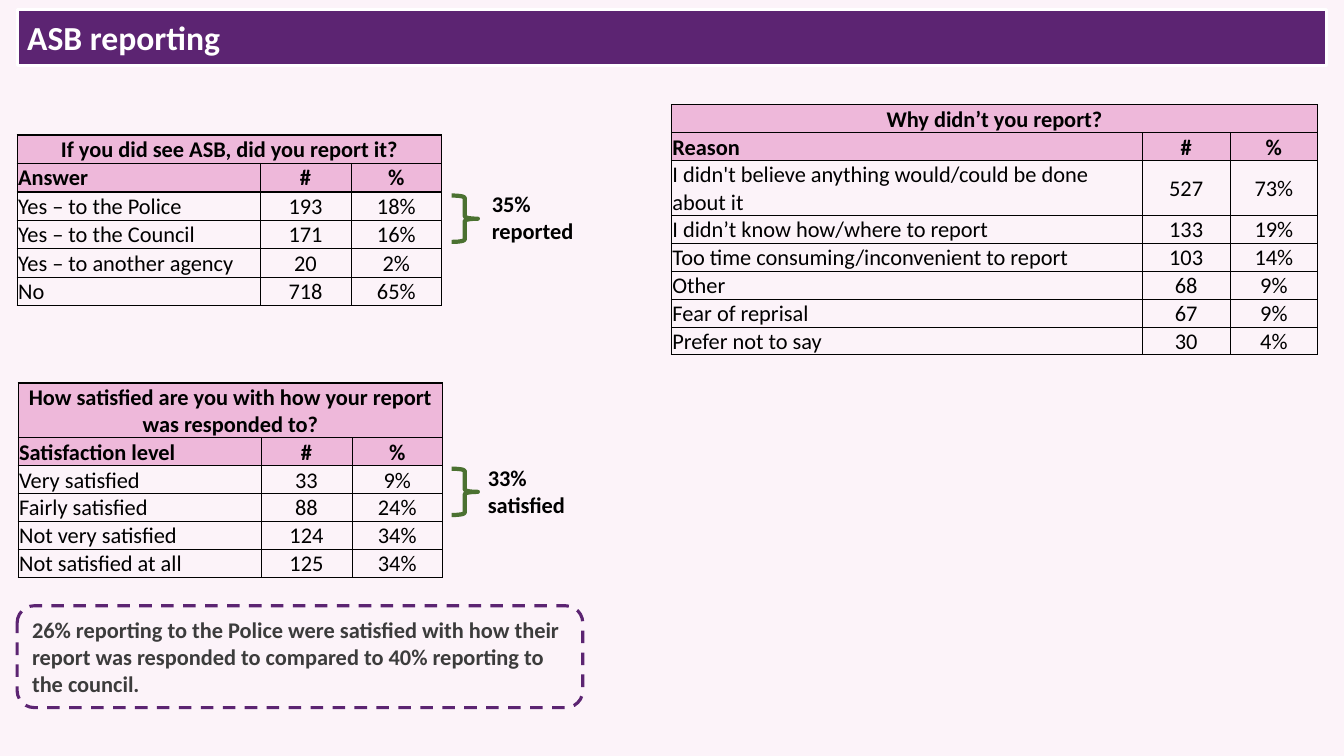
import dataclasses

import lxml.etree
import pptx
import pptx.dml.color
import pptx.enum.dml
import pptx.enum.shapes
import pptx.enum.text
import pptx.oxml
import pptx.oxml.ns
import pptx.util

Inches = pptx.util.Inches
Pt = pptx.util.Pt
Color = pptx.dml.color.RGBColor.from_string
Align = pptx.enum.text.PP_ALIGN
Anchor = pptx.enum.text.MSO_ANCHOR
Shape = pptx.enum.shapes.MSO_SHAPE


@dataclasses.dataclass(frozen=True)
class Theme:
    font: str = "Calibri"
    background: str = "FCF3F9"
    purple: str = "5C2472"
    pink: str = "EEB8DA"
    green: str = "4B7131"
    white: str = "FFFFFF"
    black: str = "000000"
    note: str = "3C3C3C"
    title_size: int = 24
    text_size: int = 16
    row_height: float = 0.27


THEME = Theme()

REPORTED = [
    ("Answer", "#", "%"),
    ("Yes – to the Police", "193", "18%"),
    ("Yes – to the Council", "171", "16%"),
    ("Yes – to another agency", "20", "2%"),
    ("No", "718", "65%"),
]
REASONS = [
    ("Reason", "#", "%"),
    ("I didn't believe anything would/could be done about it", "527", "73%"),
    ("I didn’t know how/where to report", "133", "19%"),
    ("Too time consuming/inconvenient to report", "103", "14%"),
    ("Other", "68", "9%"),
    ("Fear of reprisal", "67", "9%"),
    ("Prefer not to say", "30", "4%"),
]
SATISFACTION = [
    ("Satisfaction level", "#", "%"),
    ("Very satisfied", "33", "9%"),
    ("Fairly satisfied", "88", "24%"),
    ("Not very satisfied", "124", "34%"),
    ("Not satisfied at all", "125", "34%"),
]


def apply_format(target, values):
    for name, value in values.items():
        setattr(target, name, value)


def write_text(frame, text, color=THEME.black, size=THEME.text_size, bold=True, align=Align.LEFT):
    frame.word_wrap = True
    paragraph = frame.paragraphs[0]
    apply_format(paragraph, {"alignment": align, "line_spacing": 1.0})
    run = paragraph.add_run()
    run.text = text
    apply_format(run.font, {"name": THEME.font, "size": Pt(size), "bold": bold})
    run.font.color.rgb = Color(color)


def set_outline(shape, color, width, dash=None):
    shape.line.color.rgb = Color(color)
    apply_format(shape.line, {"width": Pt(width), "dash_style": dash})


def add_title(slide, text, box):
    title = slide.shapes.title
    apply_format(title, dict(zip(("left", "top", "width", "height"), map(Inches, box))))
    geometry = pptx.oxml.parse_xml(
        f'<a:prstGeom {pptx.oxml.ns.nsdecls("a")} prst="roundRect"><a:avLst/></a:prstGeom>'
    )
    title.element.spPr.insert(1, geometry)
    title.fill.solid()
    title.fill.fore_color.rgb = Color(THEME.purple)
    set_outline(title, THEME.white, 2.25)
    apply_format(title.text_frame, {
        "vertical_anchor": Anchor.MIDDLE,
        "auto_size": pptx.enum.text.MSO_AUTO_SIZE.NONE,
    })
    write_text(title.text_frame, text, THEME.white, THEME.title_size)


def add_outline_shape(shapes, kind, box, color, width, dash=None):
    shape = shapes.add_shape(kind, *map(Inches, box))
    shape.shadow.inherit = False
    shape.fill.background()
    set_outline(shape, color, width, dash)
    return shape


def add_brace_label(slide, text, brace_top, label_left, label_top):
    shapes = slide.shapes.add_group_shape().shapes
    add_outline_shape(shapes, Shape.RIGHT_BRACE, (4.48, brace_top, 0.26, 0.46), THEME.green, 3)
    label = shapes.add_textbox(*map(Inches, (label_left, label_top, 1.13, 0.64)))
    write_text(label.text_frame, text)


def set_borders(cell, widths):
    properties = cell._tc.get_or_add_tcPr()
    for index, (side, width) in enumerate(zip("LRTB", widths)):
        border = pptx.oxml.parse_xml(
            f'<a:ln{side} {pptx.oxml.ns.nsdecls("a")} w="{Pt(width)}">'
            f'<a:solidFill><a:srgbClr val="{THEME.black}"/></a:solidFill></a:ln{side}>'
        )
        properties.insert(index, border)


def format_cell(cell, text, heading, align):
    apply_format(cell, {
        "vertical_anchor": Anchor.MIDDLE,
        "margin_left": Inches(0.01),
        "margin_right": Inches(0.01),
        "margin_top": Inches(0.01),
        "margin_bottom": 0,
    })
    if heading:
        cell.fill.solid()
        cell.fill.fore_color.rgb = Color(THEME.pink)
    else:
        cell.fill.background()
    if text:
        write_text(cell.text_frame, text, bold=heading, align=align)


def add_survey_table(slide, heading, body, left, top, column_widths, tall_row=None):
    rows = [(heading, "", ""), *body]
    heights = [THEME.row_height * (2 if index == tall_row else 1) for index in range(len(rows))]
    box = (left, top, sum(column_widths), sum(heights))
    table = slide.shapes.add_table(len(rows), 3, *map(Inches, box)).table
    apply_format(table, {"first_row": False, "horz_banding": False})
    for column, width in zip(table.columns, column_widths):
        column.width = Inches(width)
    for row, height in zip(table.rows, heights):
        row.height = Inches(height)
    vertical = [1, 1, 0.5, 1]
    horizontal = [1, 1, 1] + [0.5] * (len(rows) - 3) + [1]
    for row, texts in enumerate(rows):
        for column, text in enumerate(texts):
            cell = table.cell(row, column)
            align = Align.CENTER if row == 0 or column else Align.LEFT
            format_cell(cell, text, row < 2, align)
            set_borders(cell, vertical[column:column + 2] + horizontal[row:row + 2])
    table.cell(0, 0).merge(table.cell(0, 2))


def add_note(slide, text, box):
    dash = pptx.enum.dml.MSO_LINE.DASH
    note = add_outline_shape(slide.shapes, Shape.ROUNDED_RECTANGLE, box, THEME.purple, 2.25, dash)
    note.text_frame.vertical_anchor = Anchor.MIDDLE
    write_text(note.text_frame, text, THEME.note)


def main():
    presentation = pptx.Presentation()
    apply_format(presentation, {"slide_width": Inches(13.33), "slide_height": Inches(7.5)})
    slide = presentation.slides.add_slide(presentation.slide_layouts[5])
    slide.background.fill.solid()
    slide.background.fill.fore_color.rgb = Color(THEME.background)

    add_title(slide, "ASB reporting", (0.17, 0.09, 12.99, 0.56))
    narrow = (2.41, 0.9, 0.9)
    add_survey_table(slide, "If you did see ASB, did you report it?", REPORTED, 0.17, 1.34, narrow)
    add_brace_label(slide, "35% reported", 1.94, 4.78, 1.84)
    add_survey_table(slide, "Why didn’t you report?", REASONS, 6.66, 1.04, (4.67, 0.87, 0.87), 2)
    add_note(
        slide,
        "26% reporting to the Police were satisfied with how their report was "
        "responded to compared to 40% reporting to the council.",
        (0.17, 6.01, 5.61, 1.01),
    )
    add_brace_label(slide, "33% satisfied", 4.65, 4.74, 4.56)
    add_survey_table(
        slide, "How satisfied are you with how your report was responded to?",
        SATISFACTION, 0.18, 3.8, narrow, 0,
    )
    presentation.save("out.pptx")


if __name__ == "__main__":
    main()
